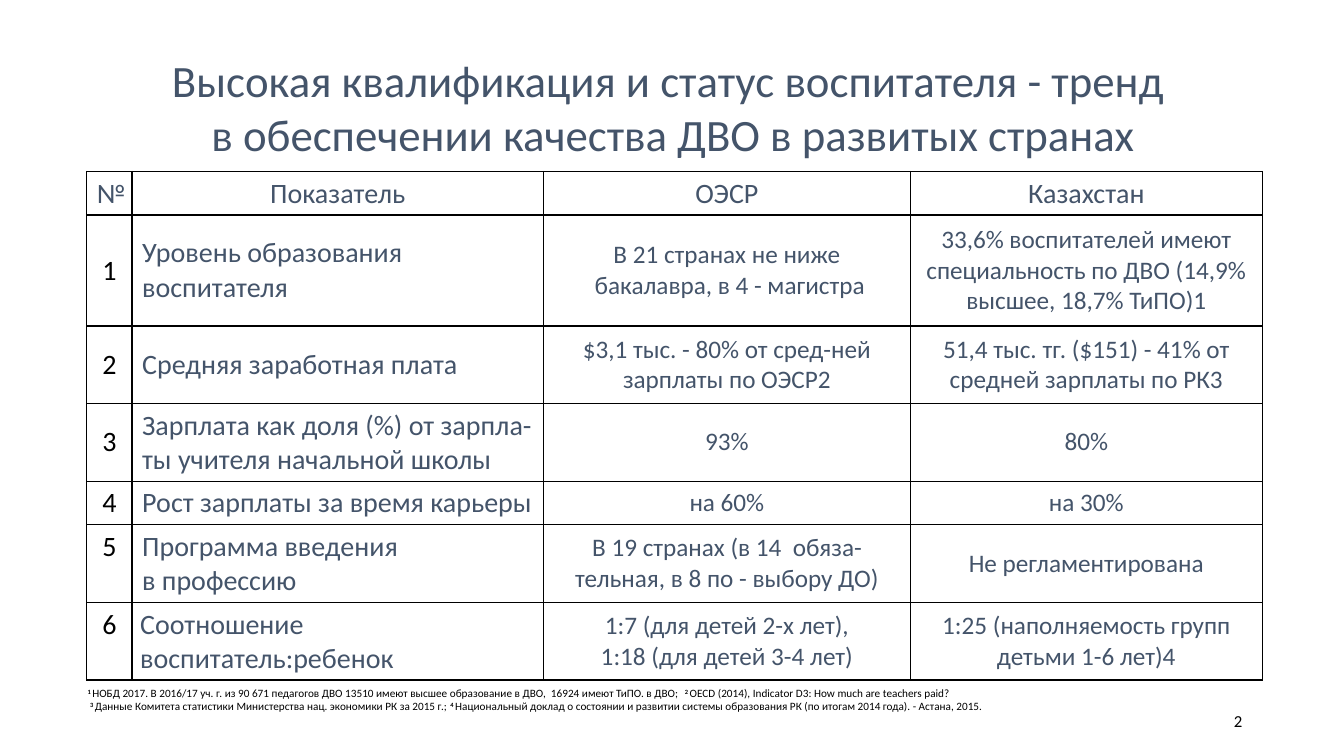
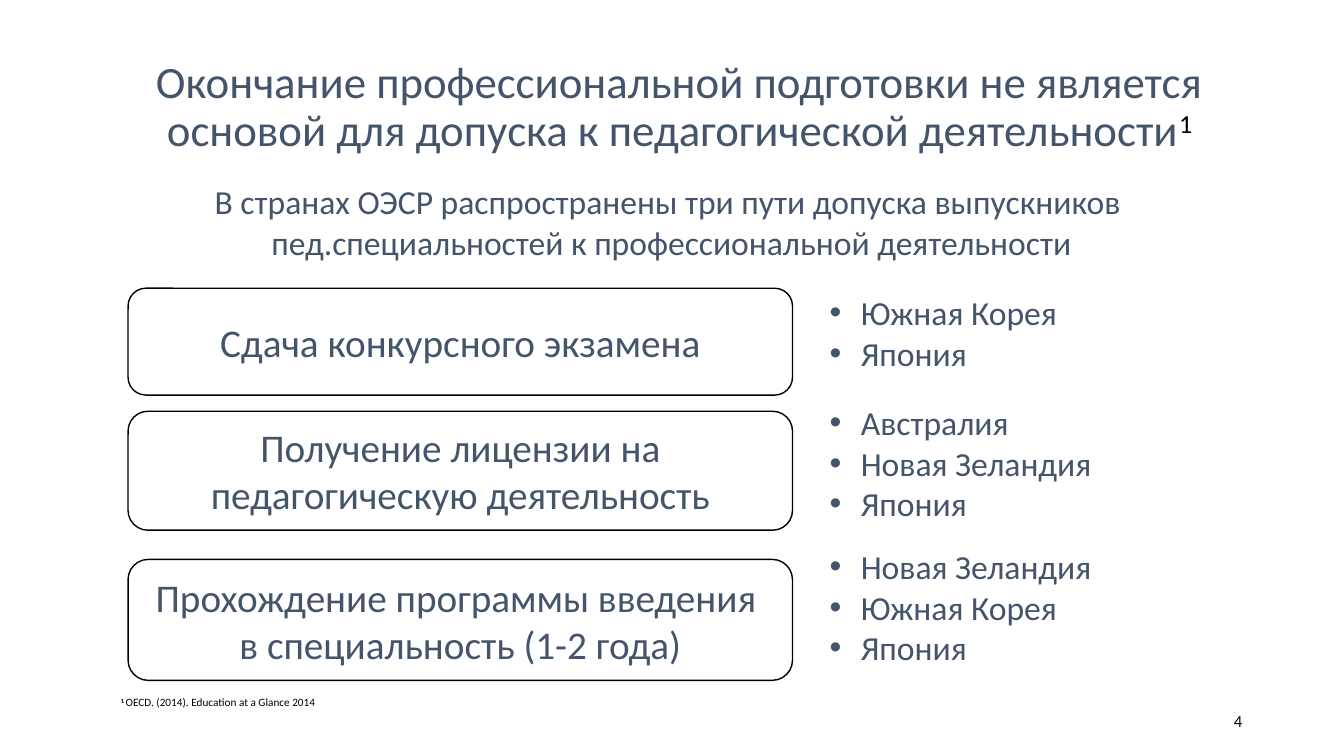
import lxml.etree
import pptx
import pptx.dml.color
import pptx.enum.shapes
import pptx.enum.text
import pptx.oxml.ns
import pptx.util

Inches = pptx.util.Inches
ALIGN = pptx.enum.text.PP_ALIGN
ANCHOR = pptx.enum.text.MSO_ANCHOR

SLATE = "44546A"
BLACK = "000000"
FONT = "Calibri"
TITLE = {"size": 32, "color": SLATE}
BODY = {"size": 24, "color": SLATE}
BOX = {"size": 28, "color": SLATE}
LABEL = {"size": 20, "color": SLATE}
ROW_NUMBER = {"size": 20, "color": BLACK}
VALUE = {"size": 18, "color": SLATE}
NOTE = {"size": 8, "color": BLACK}
PAGE_NUMBER = {"size": 12, "color": BLACK}
NOTE_MARK = {"bold": True, "raised": True}

COLUMN_WIDTHS = [0.45, 4.08, 3.64, 3.49]
ROW_HEIGHTS = [0.43, 1.1, 0.77, 0.77, 0.43, 0.77, 0.77]
HEADINGS = ["№", "Показатель", "ОЭСР", "Казахстан"]
INDICATORS = [
    (["Уровень образования воспитателя"],
     ["В 21 странах не ниже", " бакалавра, в 4 - магистра"],
     ["33,6% воспитателей имеют специальность по ДВО (14,9% высшее, 18,7% ТиПО)1"]),
    (["Средняя заработная плата"],
     ["$3,1 тыс. - 80% от сред-ней зарплаты по ОЭСР2"],
     ["51,4 тыс. тг. ($151) - 41% от средней зарплаты по РК3"]),
    (["Зарплата как доля (%) от зарпла-ты учителя начальной школы"],
     ["93%"],
     ["80%"]),
    (["Рост зарплаты за время карьеры"],
     ["на 60%"],
     ["на 30%"]),
    (["Программа введения", "в профессию"],
     ["В 19 странах (в 14  обяза-тельная, в 8 по - выбору ДО)"],
     ["Не регламентирована"]),
    (["Соотношение воспитатель:ребенок"],
     ["1:7 (для детей 2-х лет),", "1:18 (для детей 3-4 лет)"],
     ["1:25 (наполняемость групп детьми 1-6 лет)4"]),
]
TOP_ANCHORED_ROWS = (5, 6)
# Side margins of the cells that need more room, by (row, column)
SIDE_MARGINS = {(1, 2): (0.02, 0.02), (1, 3): (0.02, 0.02),
                (2, 3): (0.04, 0.04), (6, 1): (0.08, 0.04)}

# Top and height of the box, its lines, top of the list, its countries
PATHWAYS = [
    (2.86, 1.06, ["Сдача конкурсного экзамена"],
     2.85, ["Южная Корея", "Япония"]),
    (4.08, 1.18, ["Получение лицензии на педагогическую деятельность"],
     3.94, ["Австралия", "Новая Зеландия", "Япония"]),
    (5.55, 1.2, ["Прохождение программы введения ", "в специальность (1-2 года)"],
     5.37, ["Новая Зеландия", "Южная Корея", "Япония"]),
]


def rgb(value):
    return pptx.dml.color.RGBColor.from_string(value)


def apply(target, values):
    for name, value in values.items():
        setattr(target, name, value)


def add_xml(parent, tag, **attributes):
    return lxml.etree.SubElement(parent, pptx.oxml.ns.qn(tag), attributes)


def add_span(para, text, style):
    span = para.add_run()
    span.text = text
    apply(span.font, {"name": FONT, "size": pptx.util.Pt(style["size"]),
                      "bold": style.get("bold", False)})
    span.font.color.rgb = rgb(style["color"])
    if style.get("raised"):
        span.font._element.set("baseline", "30000")


def add_bullet(para):
    properties = para._p.get_or_add_pPr()
    properties.set("marL", str(Inches(0.31)))
    properties.set("indent", str(-Inches(0.31)))
    add_xml(properties, "a:buFont", typeface="Arial")
    add_xml(properties, "a:buChar", char="•")


def write(frame, lines, style, align=ALIGN.LEFT, spacing=1.0, bullets=False):
    """Fill a frame; a line is a string or a list of (text, style changes)."""
    for index, line in enumerate(lines):
        para = frame.add_paragraph() if index else frame.paragraphs[0]
        apply(para, {"alignment": align, "line_spacing": spacing})
        if bullets:
            add_bullet(para)
        spans = [(line, {})] if isinstance(line, str) else line
        for text, changes in spans:
            add_span(para, text, {**style, **changes})


def place(shape, left, top, width, height):
    apply(shape, {"left": Inches(left), "top": Inches(top),
                  "width": Inches(width), "height": Inches(height)})


def add_text(slide, area, lines, style, anchor=ANCHOR.TOP, **layout):
    box = slide.shapes.add_textbox(*map(Inches, area))
    apply(box.text_frame, {"word_wrap": True, "vertical_anchor": anchor})
    write(box.text_frame, lines, style, **layout)


def add_titled_slide(deck, area, lines, number, anchor, spacing):
    slide = deck.slides.add_slide(deck.slide_layouts[5])
    title = slide.shapes.title
    place(title, *area)
    apply(title.text_frame, {"word_wrap": True, "vertical_anchor": anchor,
                             "auto_size": pptx.enum.text.MSO_AUTO_SIZE.NONE})
    write(title.text_frame, lines, TITLE, ALIGN.CENTER, spacing)
    add_text(slide, (9.42, 6.95, 3, 0.4), [number], PAGE_NUMBER,
             ANCHOR.MIDDLE, align=ALIGN.RIGHT)
    return slide


def add_rounded_box(slide, area, lines):
    box = slide.shapes.add_shape(
        pptx.enum.shapes.MSO_SHAPE.ROUNDED_RECTANGLE, *map(Inches, area))
    box.shadow.inherit = False
    box.fill.background()
    box.line.color.rgb = rgb(BLACK)
    box.line.width = pptx.util.Pt(1)
    apply(box.text_frame, {"word_wrap": True, "vertical_anchor": ANCHOR.MIDDLE})
    write(box.text_frame, lines, BOX, ALIGN.CENTER)


def add_borders(cell):
    properties = cell._tc.get_or_add_tcPr()
    for side in ("a:lnL", "a:lnR", "a:lnT", "a:lnB"):
        line = add_xml(properties, side, w=str(pptx.util.Pt(1)))
        add_xml(add_xml(line, "a:solidFill"), "a:srgbClr", val=BLACK)


def fill_cell(cell, lines, style, align, anchor, sides):
    add_borders(cell)
    cell.fill.background()
    left, right = sides
    apply(cell, {"vertical_anchor": anchor,
                 "margin_left": Inches(left), "margin_right": Inches(right),
                 "margin_top": Inches(0.05), "margin_bottom": Inches(0.05)})
    write(cell.text_frame, lines, style, align)


def add_indicator_table(slide):
    rows = [[[heading] for heading in HEADINGS]]
    rows += [[[str(number)], *texts] for number, texts in enumerate(INDICATORS, 1)]
    table = slide.shapes.add_table(
        len(rows), len(HEADINGS), Inches(0.86), Inches(1.7),
        Inches(sum(COLUMN_WIDTHS)), Inches(sum(ROW_HEIGHTS))).table
    apply(table, {"first_row": False, "horz_banding": False})
    for column, width in zip(table.columns, COLUMN_WIDTHS):
        column.width = Inches(width)
    for row, height in zip(table.rows, ROW_HEIGHTS):
        row.height = Inches(height)

    column_styles = [ROW_NUMBER, LABEL, VALUE, VALUE]
    for r, row in enumerate(rows):
        for c, lines in enumerate(row):
            style = column_styles[c] if r else LABEL
            align = ALIGN.LEFT if r and c == 1 else ALIGN.CENTER
            at_top = c == 0 and r in TOP_ANCHORED_ROWS
            fill_cell(table.cell(r, c), lines, style, align,
                      ANCHOR.TOP if at_top else ANCHOR.MIDDLE,
                      SIDE_MARGINS.get((r, c), (0.1, 0.1)))


def build_indicators(deck):
    slide = add_titled_slide(
        deck, (1.04, 0.47, 11.28, 1.18),
        ["Высокая квалификация и статус воспитателя - тренд ",
         "в обеспечении качества ДВО в развитых странах"],
        "2", ANCHOR.TOP, 1.0)
    add_indicator_table(slide)
    add_text(slide, (0.77, 6.76, 11.74, 0.38), [
        [("1 ", NOTE_MARK),
         ("НОБД 2017. В 2016/17 уч. г. из 90 671 педагогов ДВО 13510 имеют высшее "
          "образование в ДВО,  16924 имеют ТиПО. в ДВО;  ", {}),
         ("2 ", NOTE_MARK),
         ("OECD (2014), Indicator D3: How much are teachers paid?", {})],
        [(" ", {}),
         ("3 ", NOTE_MARK),
         ("Данные Комитета статистики Министерства нац. экономики РК за 2015 г.; ", {}),
         ("4 ", NOTE_MARK),
         ("Национальный доклад о состоянии и развитии системы образования РК "
          "(по итогам 2014 года). - Астана, 2015.", {})],
    ], NOTE)


def build_pathways(deck):
    slide = add_titled_slide(
        deck, (0.99, 0.47, 11.5, 1.2),
        [[("Окончание профессиональной подготовки не является основой "
           "для допуска к педагогической деятельности", {}),
          ("1", {"color": BLACK, "raised": True})]],
        "4", ANCHOR.MIDDLE, 0.9)
    add_text(slide, (1.12, 1.75, 11.08, 0.98),
             ["В странах ОЭСР распространены три пути допуска выпускников ",
              "пед.специальностей к профессиональной деятельности"],
             BODY, align=ALIGN.CENTER)
    for box_top, box_height, lines, list_top, countries in PATHWAYS:
        add_rounded_box(slide, (1.27, box_top, 6.59, box_height), lines)
        add_text(slide, (8.13, list_top, 3.63, 0.1 + 0.4 * len(countries)),
                 countries, BODY, bullets=True)
    add_text(slide, (1.1, 6.85, 2.14, 0.24),
             [[("1 ", NOTE_MARK), ("OECD. (2014). Education at a Glance 2014", {})]],
             NOTE)


def main():
    deck = pptx.Presentation()
    apply(deck, {"slide_width": Inches(13.33), "slide_height": Inches(7.5)})
    build_indicators(deck)
    build_pathways(deck)
    deck.save("out.pptx")


if __name__ == "__main__":
    main()
